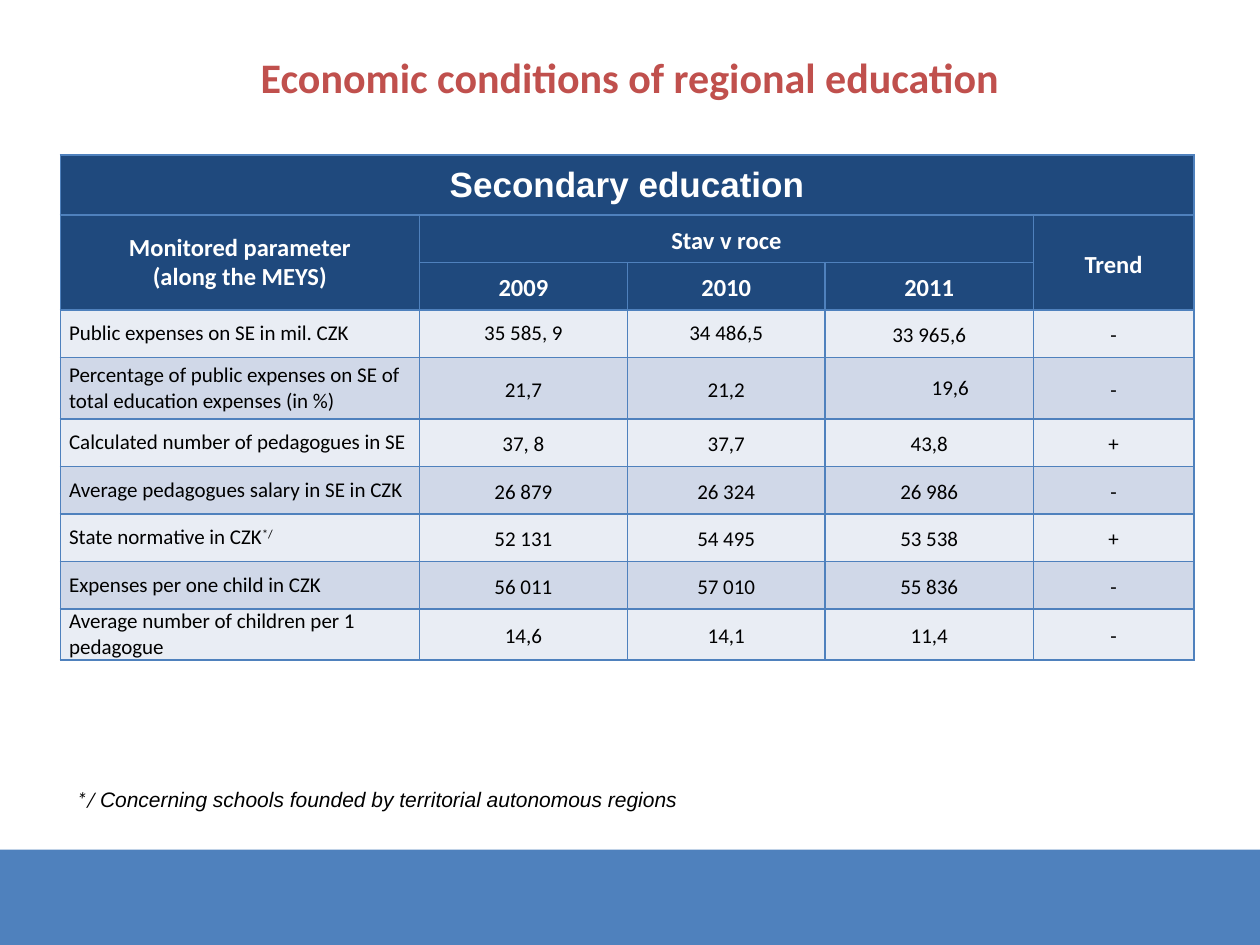
from lxml.etree import SubElement as Sub
from pptx import Presentation as Deck
from pptx.dml.color import RGBColor as Rgb
from pptx.enum.shapes import MSO_SHAPE as Kind
from pptx.enum.text import MSO_ANCHOR as Anchor, MSO_AUTO_SIZE as Auto, PP_ALIGN as Align
from pptx.oxml.ns import qn
from pptx.util import Pt

TITLE = "Economic conditions of regional education"
NOTE = [("*/ ", {}), ("Concerning schools founded by territorial autonomous regions", {"font": "Arial"})]
HEAD = [
    (0, 0, 0, 4, "Secondary education"),
    (1, 0, 2, 0, "Monitored parameter\n(along the MEYS)"),
    (1, 1, 1, 3, "Stav v roce"),
    (1, 4, 2, 4, "Trend"),
    (2, 1, 2, 1, "2009"),
    (2, 2, 2, 2, "2010"),
    (2, 3, 2, 3, "2011"),
]
BODY = [
    ("Public expenses on SE in mil. CZK", "35 585, 9", "34 486,5", "33 965,6", "-"),
    ("Percentage of public expenses on SE of total education expenses (in %)", "21,7", "21,2", "19,6", "-"),
    ("Calculated number of pedagogues in SE", "37, 8", "37,7", "43,8", "+"),
    ("Average pedagogues salary in SE in CZK", "26 879", "26 324", "26 986", "-"),
    ([("State normative in CZK", {}), ("*/", {"base": 30000})], "52 131", "54 495", "53 538", "+"),
    ("Expenses per one child in CZK", "56 011", "57 010", "55 836", "-"),
    ("Average number of children per 1 pedagogue", "14,6", "14,1", "11,4", "-"),
]
TIGHT = {"35 585, 9", "34 486,5", "19,6"}
SHIFT = {"19,6": 24}
COLS = [205.2, 118.8, 113, 119, 91.7]
ROWS = [34.3] + [27.1] * 3 + [35.3] + [27.1] * 5
THEME = {
    "bar": "4F81BD", "line": "4F81BD", "head": "1F497D", "bands": ("E9EDF4", "D0D8E8"),
    "title": "C0504D", "light": "FFFFFF", "dark": "000000", "font": "Calibri",
    "big": 24, "top": 20, "mid": 14, "text": 12,
}


def write(frame, text, size=THEME["text"], color=THEME["dark"], font=THEME["font"],
          bold=False, italic=False, align=Align.LEFT, space=1.0):
    """Fill a text frame with a string or with (text, format) runs."""
    lines = [[(line, {})] for line in text.split("\n")] if isinstance(text, str) else [text]
    for i, runs in enumerate(lines):
        para = frame.add_paragraph() if i else frame.paragraphs[0]
        para.alignment, para.line_spacing = align, space
        for words, form in runs:
            run = para.add_run()
            run.text = words
            run.font.name = form.get("font", font)
            run.font.size = Pt(size)
            run.font.bold, run.font.italic = bold, italic
            run.font.color.rgb = Rgb.from_string(color)
            if "base" in form:
                run.font._element.set("baseline", str(form["base"]))


def label(slide, box, text, **form):
    """Add a wrapped text box."""
    frame = slide.shapes.add_textbox(*map(Pt, box)).text_frame
    frame.word_wrap = True
    frame.auto_size = Auto.SHAPE_TO_FIT_TEXT
    write(frame, text, **form)


def dress(cell, fill):
    """Give a cell its borders, fill, insets and anchor."""
    props = cell._tc.get_or_add_tcPr()
    for side in ("lnL", "lnR", "lnT", "lnB"):
        line = Sub(props, qn("a:" + side), w=str(Pt(1)))
        Sub(Sub(line, qn("a:solidFill")), qn("a:srgbClr"), val=THEME["line"])
    cell.fill.solid()
    cell.fill.fore_color.rgb = Rgb.from_string(fill)
    cell.margin_left = cell.margin_right = Pt(5)
    cell.margin_top = cell.margin_bottom = 0
    cell.vertical_anchor = Anchor.MIDDLE


def grid(slide):
    """Build the table of monitored parameters."""
    shape = slide.shapes.add_table(len(ROWS), len(COLS), Pt(34.5), Pt(88.6), Pt(sum(COLS)), Pt(sum(ROWS)))
    table = shape.table
    for col, width in zip(table.columns, COLS):
        col.width = Pt(width)
    start = len(ROWS) - len(BODY)
    for r, height in enumerate(ROWS):
        table.rows[r].height = Pt(height)
        fill = THEME["head"] if r < start else THEME["bands"][(r - start) % 2]
        for c in range(len(COLS)):
            dress(table.cell(r, c), fill)
    for top, left, end, right, text in HEAD:
        cell = table.cell(top, left)
        if (top, left) != (end, right):
            cell.merge(table.cell(end, right))
        write(cell.text_frame, text, size=THEME["mid"] if top else THEME["top"],
              font=THEME["font"] if top else "Arial", color=THEME["light"], bold=True,
              align=Align.CENTER, space=1.15 if top and left else 1.0)
    for r, row in enumerate(BODY, start):
        for c, text in enumerate(row):
            cell = table.cell(r, c)
            if c == 0:
                write(cell.text_frame, text)
                continue
            cell.margin_left = Pt(5 + SHIFT.get(text, 0))
            write(cell.text_frame, text, align=Align.CENTER, space=1.0 if text in TIGHT else 1.15)


def main():
    """Build the slide and save it."""
    deck = Deck()
    deck.slide_width, deck.slide_height = Pt(720), Pt(540)
    slide = deck.slides.add_slide(deck.slide_layouts[6])
    bar = slide.shapes.add_shape(Kind.RECTANGLE, 0, Pt(485.5), Pt(720), Pt(54.5))
    bar.shadow.inherit = False
    bar.fill.solid()
    bar.fill.fore_color.rgb = Rgb.from_string(THEME["bar"])
    bar.line.fill.background()
    grid(slide)
    label(slide, (8.6, 26, 702.7, 65.5), TITLE, size=THEME["big"], color=THEME["title"],
          bold=True, align=Align.CENTER)
    label(slide, (36.7, 445.7, 646.6, 21.8), NOTE, italic=True)
    deck.save("out.pptx")


if __name__ == "__main__":
    main()
